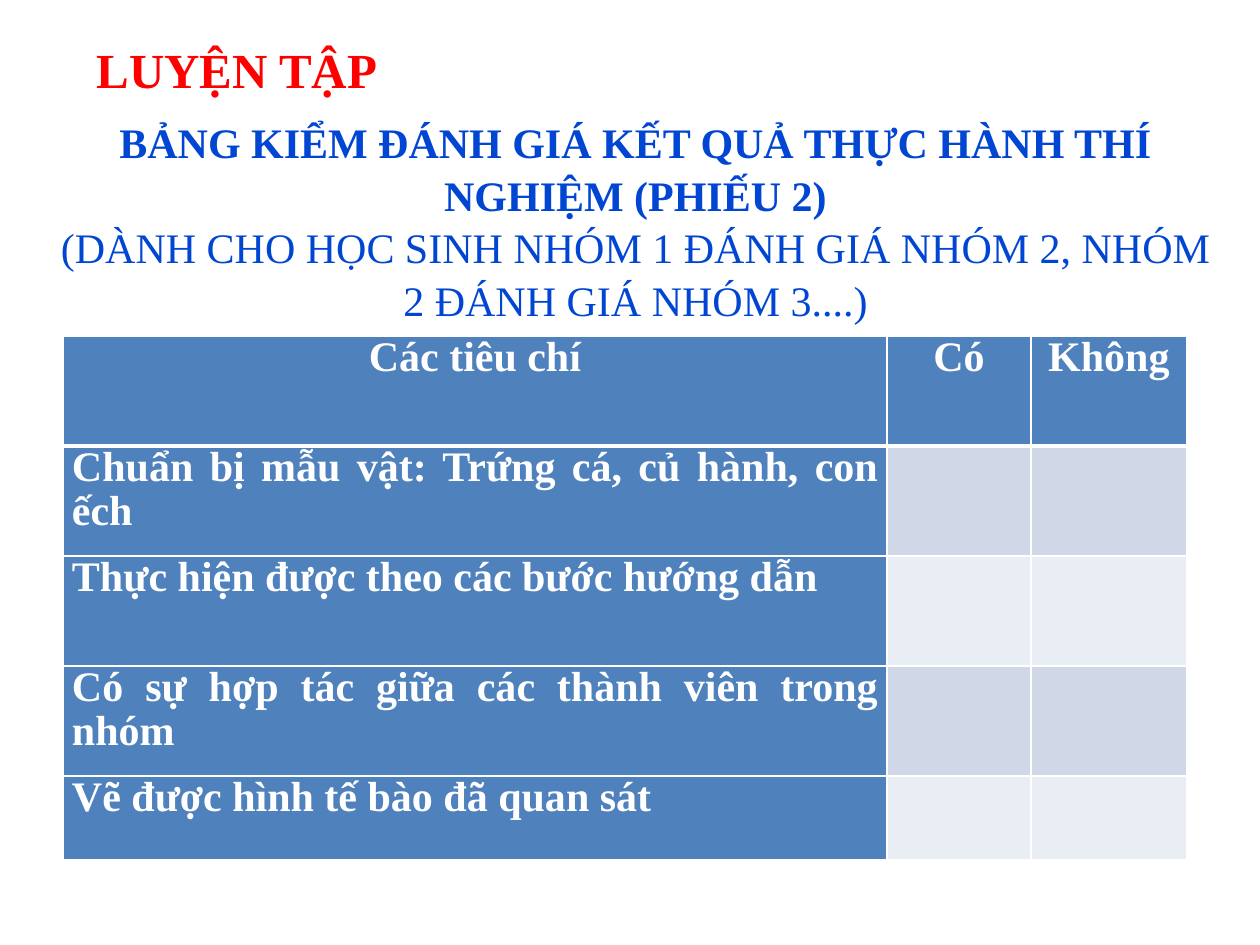
from dataclasses import dataclass

from lxml import etree
from pptx import Presentation
from pptx.dml.color import RGBColor
from pptx.enum.text import MSO_ANCHOR, PP_ALIGN
from pptx.oxml.ns import qn
from pptx.util import Pt

LEFT, CENTER, JUSTIFY = PP_ALIGN.LEFT, PP_ALIGN.CENTER, PP_ALIGN.JUSTIFY
TOP, MIDDLE = MSO_ANCHOR.TOP, MSO_ANCHOR.MIDDLE
EMU_PER_PX = 914400 / 126


@dataclass(frozen=True)
class Theme:
    font: str = "Times New Roman"
    title_size: int = 28
    body_size: int = 24
    red: str = "FF0000"
    blue: str = "0046D2"
    white: str = "FFFFFF"
    header: str = "4F81BD"
    bands: tuple = ("D0D8E8", "E9EDF4")


THEME = Theme()


def px(length):
    return round(length * EMU_PER_PX)


def style_paragraph(paragraph, size, color, alignment, bold=True):
    paragraph.alignment = alignment
    font = paragraph.font
    font.name, font.size, font.bold = THEME.font, Pt(size), bold
    font.color.rgb = RGBColor.from_string(color)


presentation = Presentation()
presentation.slide_width, presentation.slide_height = px(1260), px(945)
slide = presentation.slides.add_slide(presentation.slide_layouts[5])

# Title
title = slide.shapes.title
title.left, title.top, title.width, title.height = px(84), px(33), px(336), px(72)
title.text_frame.text = "LUYỆN TẬP"
title.text_frame.vertical_anchor = TOP
style_paragraph(title.text_frame.paragraphs[0], THEME.title_size, THEME.red, LEFT)

# Criteria table
rows = [
    ("Các tiêu chí", "Có", "Không"),
    ("Chuẩn bị mẫu vật: Trứng cá, củ hành, con ếch", "", ""),
    ("Thực hiện được theo các bước hướng dẫn", "", ""),
    ("Có sự hợp tác giữa các thành viên trong nhóm", "", ""),
    ("Vẽ được hình tế bào đã quan sát", "", ""),
]
column_widths = (824, 144, 156)
row_heights = (110, 110, 110, 110, 84)
table = slide.shapes.add_table(
    len(rows), len(column_widths), px(63), px(336),
    px(sum(column_widths)), px(sum(row_heights))).table
for column, width in zip(table.columns, column_widths):
    column.width = px(width)
for row, height in zip(table.rows, row_heights):
    row.height = px(height)

for row_index, texts in enumerate(rows):
    for column_index, text in enumerate(texts):
        cell = table.cell(row_index, column_index)
        is_header = row_index == 0
        cell.margin_left = cell.margin_right = px(9)
        cell.margin_top = cell.margin_bottom = 0
        cell.text = text
        paragraph = cell.text_frame.paragraphs[0]
        style_paragraph(paragraph, THEME.body_size, THEME.white,
                        CENTER if is_header else JUSTIFY)
        paragraph.line_spacing = 0.95
        paragraph.space_after = Pt(0 if is_header else 3)

        properties = cell._tc.get_or_add_tcPr()
        for side in ("L", "R", "T", "B"):
            heavy = (side == "B" and is_header) or (side == "T" and row_index == 1)
            line = etree.SubElement(properties, qn(f"a:ln{side}"),
                                    w=str(Pt(3 if heavy else 1)))
            solid = etree.SubElement(line, qn("a:solidFill"))
            etree.SubElement(solid, qn("a:srgbClr"), val=THEME.white)
        cell.fill.solid()
        filled = is_header or column_index == 0
        color = THEME.header if filled else THEME.bands[(row_index - 1) % 2]
        cell.fill.fore_color.rgb = RGBColor.from_string(color)

# Heading above the table
heading = slide.shapes.add_textbox(px(42), px(111), px(1187), px(217)).text_frame
heading.word_wrap = True
heading.vertical_anchor = MIDDLE
heading.text = (
    "BẢNG KIỂM ĐÁNH GIÁ KẾT QUẢ THỰC HÀNH THÍ NGHIỆM (PHIẾU 2)\n"
    "(DÀNH CHO HỌC SINH NHÓM 1 ĐÁNH GIÁ NHÓM 2, NHÓM 2 ĐÁNH GIÁ NHÓM 3....)")
for paragraph, bold in zip(heading.paragraphs, (True, False)):
    style_paragraph(paragraph, THEME.body_size, THEME.blue, CENTER, bold)
    paragraph.line_spacing = 1.05

presentation.save("out.pptx")
